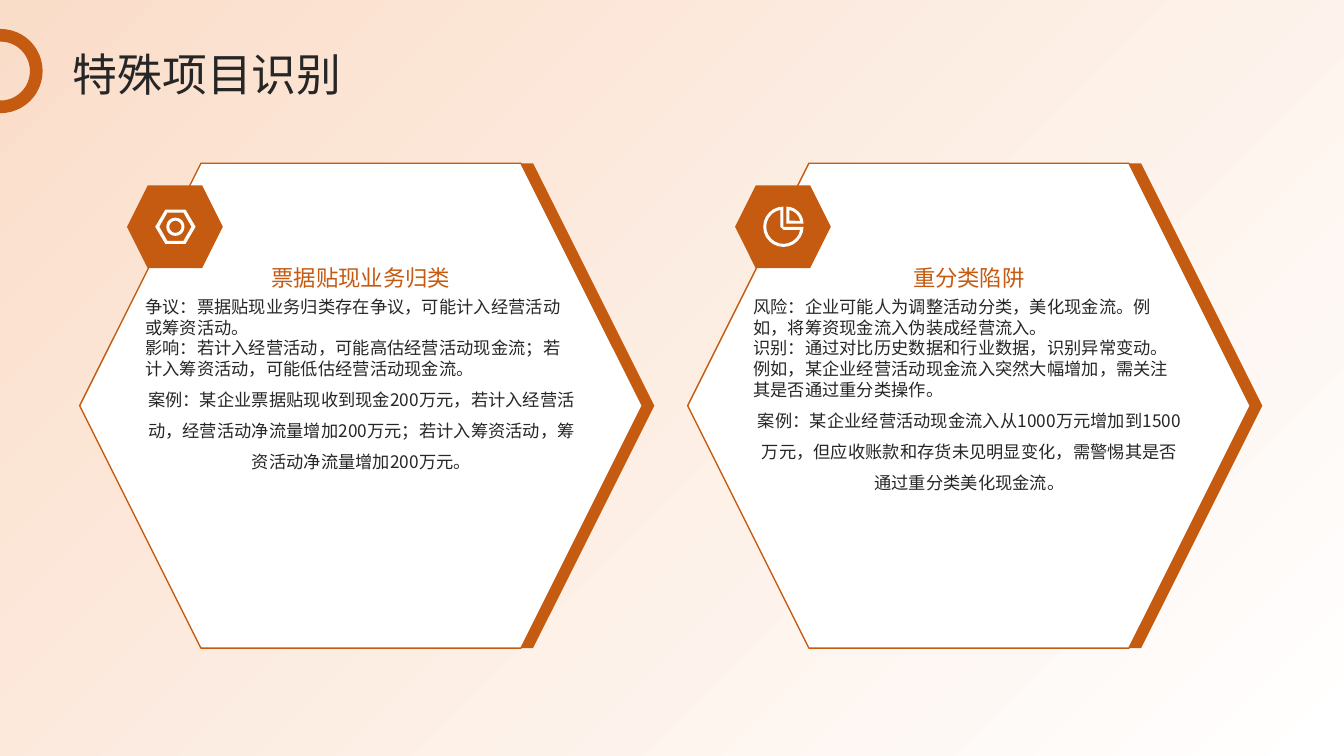
from dataclasses import dataclass
from math import cos, radians, sin

from lxml import etree
from pptx import Presentation
from pptx.dml.color import RGBColor
from pptx.enum.shapes import MSO_SHAPE
from pptx.enum.text import MSO_ANCHOR, MSO_AUTO_SIZE, PP_ALIGN
from pptx.oxml.ns import qn
from pptx.shapes.autoshape import Shape
from pptx.slide import Slide
from pptx.text.text import TextFrame
from pptx.util import Inches, Pt

RECT, HEXAGON, OVAL = MSO_SHAPE.RECTANGLE, MSO_SHAPE.HEXAGON, MSO_SHAPE.OVAL
LEFT, CENTER = PP_ALIGN.LEFT, PP_ALIGN.CENTER
TOP, MIDDLE, BOTTOM = MSO_ANCHOR.TOP, MSO_ANCHOR.MIDDLE, MSO_ANCHOR.BOTTOM
NO_AUTOFIT = MSO_AUTO_SIZE.NONE

COLORS = {"accent": "C55A11", "text": "262626", "white": "FFFFFF", "peach": "FADDC9"}
FONT = "Noto Sans CJK SC"
SLIDE_W, SLIDE_H = 13.33, 7.5
CARD_LEFT, CARD_PITCH = 0.79, 6.03
ARC_STEP = 15  # degrees
UNITS = 1000  # freeform units per inch

Contour = list[tuple[float, float]]


@dataclass
class Line:
    text: str
    size: float
    color: str = "text"
    align: PP_ALIGN = LEFT
    spacing: float = 1.0
    hanging: bool = True


@dataclass
class Card:
    heading: str
    points: list[str]
    example: str
    icon: list[Contour]


def arc(cx: float, cy: float, r: float, start: int, end: int) -> Contour:
    """Points on an arc; degrees run clockwise from the right."""
    steps = abs(end - start) // ARC_STEP
    angles = [radians(start + (end - start) * i / steps) for i in range(steps + 1)]
    return [(cx + r * cos(a), cy + r * sin(a)) for a in angles]


def hexagon(x: float, shoulder: float, y: float) -> Contour:
    return [(-x, 0), (-shoulder, -y), (shoulder, -y), (x, 0), (shoulder, y), (-shoulder, y)]


NUT = [
    hexagon(0.2, 0.1, 0.17),
    hexagon(0.16, 0.08, 0.14),
    arc(0, 0, 0.09, 0, 360),
    arc(0, 0, 0.06, 0, 360),
]
PIE = [
    [(0, 0)] + arc(0, 0, 0.2, 0, 270),
    [(-0.03, 0), (0, 0.03)] + arc(0, 0, 0.17, 10, 260),
    [(0.03, -0.03)] + arc(0.03, -0.03, 0.17, 270, 360),
    [(0.06, -0.06)] + arc(0.03, -0.03, 0.14, 282, 348),
]

CARDS = [
    Card(
        "票据贴现业务归类",
        ["争议：票据贴现业务归类存在争议，可能计入经营活动或筹资活动。",
         "影响：若计入经营活动，可能高估经营活动现金流；若计入筹资活动，可能低估经营活动现金流。"],
        "案例：某企业票据贴现收到现金200万元，若计入经营活动，经营活动净流量增加200万元；"
        "若计入筹资活动，筹资活动净流量增加200万元。",
        NUT,
    ),
    Card(
        "重分类陷阱",
        ["风险：企业可能人为调整活动分类，美化现金流。例如，将筹资现金流入伪装成经营流入。",
         "识别：通过对比历史数据和行业数据，识别异常变动。例如，某企业经营活动现金流入突然大幅增加，"
         "需关注其是否通过重分类操作。"],
        "案例：某企业经营活动现金流入从1000万元增加到1500万元，但应收账款和存货未见明显变化，"
        "需警惕其是否通过重分类美化现金流。",
        PIE,
    ),
]


def rgb(name: str) -> RGBColor:
    return RGBColor.from_string(COLORS[name])


def paint(sp: Shape, fill: str | None, line: str | None = None, width: float = 1) -> None:
    sp.shadow.inherit = False
    if fill:
        sp.fill.solid()
        sp.fill.fore_color.rgb = rgb(fill)
    else:
        sp.fill.background()
    if line:
        sp.line.color.rgb = rgb(line)
        sp.line.width = Pt(width)
    else:
        sp.line.fill.background()


def add_shape(s: Slide, kind: MSO_SHAPE, x: float, y: float, w: float, h: float) -> Shape:
    return s.shapes.add_shape(kind, Inches(x), Inches(y), Inches(w), Inches(h))


def write(tf: TextFrame, lines: list[Line], anchor: MSO_ANCHOR) -> None:
    tf.word_wrap = True
    tf.auto_size = NO_AUTOFIT
    tf.vertical_anchor = anchor
    tf.margin_left = tf.margin_right = tf.margin_top = tf.margin_bottom = 0
    tf.text = "\n".join(line.text for line in lines)
    for p, line in zip(tf.paragraphs, lines):
        p.alignment = line.align
        p.line_spacing = line.spacing
        p._p.get_or_add_pPr().set("hangingPunct", str(int(line.hanging)))
        for r in p.runs:
            r.font.size = Pt(line.size)
            r.font.name = FONT
            r.font.color.rgb = rgb(line.color)
            # East Asian characters take their own typeface
            etree.SubElement(r.font._element, qn("a:ea"), typeface=FONT)


def add_text(s: Slide, x: float, y: float, w: float, h: float,
             lines: list[Line], anchor: MSO_ANCHOR = TOP) -> None:
    box = s.shapes.add_textbox(Inches(x), Inches(y), Inches(w), Inches(h))
    write(box.text_frame, lines, anchor)


def add_icon(s: Slide, cx: float, cy: float, contours: list[Contour]) -> None:
    """Draw one freeform whose inner contours are holes."""
    placed = [[((cx + x) * UNITS, (cy + y) * UNITS) for x, y in c] for c in contours]
    builder = s.shapes.build_freeform(*placed[0][0], scale=Inches(1) / UNITS)
    for i, contour in enumerate(placed):
        if i:
            builder.move_to(*contour[0])
        builder.add_line_segments(contour[1:], close=True)
    paint(builder.convert_to_shape(), "white")


def add_card(s: Slide, x: float, card: Card) -> None:
    paint(add_shape(s, HEXAGON, x + 0.12, 1.62, 5.58, 4.81), "accent")
    paint(add_shape(s, HEXAGON, x, 1.62, 5.58, 4.81), "white", "accent")
    body = [Line(point, 12.3, hanging=False) for point in card.points]
    body.append(Line(card.example, 12.3, align=CENTER, spacing=1.5))
    add_text(s, x + 0.65, 2.94, 4.29, 2.26, body)
    heading = Line(card.heading, 16, "accent", CENTER, 1.3)
    add_text(s, x + 1.46, 2.07, 2.66, 0.82, [heading], BOTTOM)
    paint(add_shape(s, HEXAGON, x + 0.47, 1.84, 0.95, 0.82), "accent")
    add_icon(s, x + 0.95, 2.25, card.icon)


def add_background(s: Slide) -> None:
    sp = add_shape(s, RECT, 0, 0, SLIDE_W, SLIDE_H)
    paint(sp, None)
    sp.fill.gradient()
    sp.fill.gradient_angle = 135
    for stop, color in zip(sp.fill.gradient_stops, ("white", "peach")):
        stop.color.rgb = rgb(color)
    s.shapes.element.insert(2, sp.element)  # behind the title


def add_title(s: Slide) -> None:
    title = s.shapes.title
    title.left, title.top = Inches(0.72), Inches(0.47)
    title.width, title.height = Inches(11.88), Inches(0.47)
    write(title.text_frame, [Line("特殊项目识别", 32, spacing=1.1)], MIDDLE)


def main() -> None:
    prs = Presentation()
    prs.slide_width, prs.slide_height = Inches(SLIDE_W), Inches(SLIDE_H)
    s = prs.slides.add_slide(prs.slide_layouts.get_by_name("Title Only"))
    add_background(s)
    for i, card in enumerate(CARDS):
        add_card(s, CARD_LEFT + i * CARD_PITCH, card)
    paint(add_shape(s, OVAL, -0.35, 0.35, 0.71, 0.71), None, "accent", 9)
    add_title(s)
    prs.save("out.pptx")


if __name__ == "__main__":
    main()
